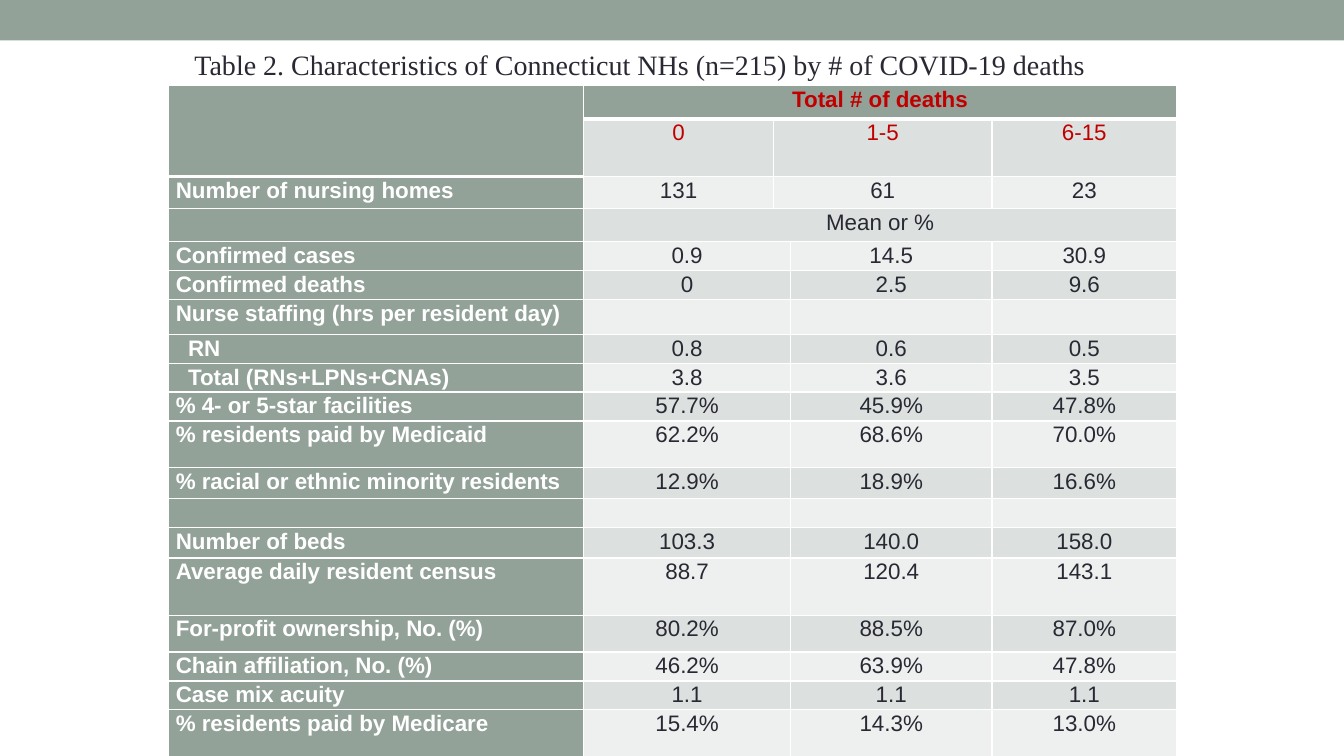
from dataclasses import dataclass

from lxml.etree import SubElement
from pptx import Presentation
from pptx.dml.color import RGBColor as RGB
from pptx.enum.shapes import MSO_SHAPE as Shape
from pptx.enum.text import PP_ALIGN as Align
from pptx.oxml import parse_xml
from pptx.oxml.ns import nsdecls, qn
from pptx.util import Cm, Pt


@dataclass(frozen=True)
class Theme:
    sage: str = "93A299"
    band_dark: str = "DCE0DE"
    band_light: str = "EEF0EF"
    ink: str = "292934"
    red: str = "C00000"
    white: str = "FFFFFF"
    title_font: str = "Times New Roman"
    body_font: str = "Arial"
    title_size: int = 20
    body_size: int = 16
    thin: float = 1
    thick: float = 3


THEME = Theme()

# Value cells of a row, as (first column, columns covered)
WIDE = ((1, 4),)
COUNTS = ((1, 1), (2, 2), (4, 1))
MEANS = ((1, 2), (3, 1), (4, 1))
BLANK = ("", "", "")


@dataclass(frozen=True)
class Row:
    height: float
    label: str
    values: tuple
    layout: tuple = MEANS
    indent: float = 0
    color: str = THEME.ink


COLUMN_WIDTHS = (10.46, 4.78, 0.43, 5.08, 4.65)
HEADER_ROWS = 2
SIDE_MARGIN = 0.18
ROWS = (
    Row(0.83, "", ("Total # of deaths",), WIDE, color=THEME.red),
    Row(1.46, "", ("0", "1-5", "6-15"), COUNTS, color=THEME.red),
    Row(0.81, "Number of nursing homes", ("131", "61", "23"), COUNTS),
    Row(0.83, "", ("Mean or %",), WIDE),
    Row(0.73, "Confirmed cases", ("0.9", "14.5", "30.9")),
    Row(0.73, "Confirmed deaths", ("0", "2.5", "9.6")),
    Row(0.88, "Nurse staffing (hrs per resident day)", BLANK),
    Row(0.72, "RN", ("0.8", "0.6", "0.5"), indent=0.31),
    Row(0.72, "Total (RNs+LPNs+CNAs)", ("3.8", "3.6", "3.5"), indent=0.31),
    Row(0.73, "% 4- or 5-star facilities", ("57.7%", "45.9%", "47.8%")),
    Row(1.18, "% residents paid by Medicaid", ("62.2%", "68.6%", "70.0%")),
    Row(0.78, "% racial or ethnic minority residents", ("12.9%", "18.9%", "16.6%")),
    Row(0.73, "", BLANK),
    Row(0.76, "Number of beds", ("103.3", "140.0", "158.0")),
    Row(1.44, "Average daily resident census", ("88.7", "120.4", "143.1")),
    Row(0.93, "For-profit ownership, No. (%)", ("80.2%", "88.5%", "87.0%")),
    Row(0.73, "Chain affiliation, No. (%)", ("46.2%", "63.9%", "47.8%")),
    Row(0.71, "Case mix acuity", ("1.1", "1.1", "1.1")),
    Row(1.18, "% residents paid by Medicare", ("15.4%", "14.3%", "13.0%")),
)


def add_run(p, text: str, font: str, size: int, color: str, bold: bool = False) -> None:
    r = p.add_run()
    r.text = text
    r.font.name = font
    r.font.size = Pt(size)
    r.font.bold = bold
    r.font.color.rgb = RGB.from_string(color)


def set_borders(cell, top: float, bottom: float) -> None:
    """White rules on all four sides, in the order the schema asks for."""
    widths = {"L": THEME.thin, "R": THEME.thin, "T": top, "B": bottom}
    tc_pr = cell._tc.get_or_add_tcPr()
    for i, (side, width) in enumerate(widths.items()):
        tc_pr.insert(i, parse_xml(
            f'<a:ln{side} {nsdecls("a")} w="{Pt(width)}"><a:solidFill>'
            f'<a:srgbClr val="{THEME.white}"/></a:solidFill></a:ln{side}>'))


def style_cell(cell, fill: str, top: float, bottom: float) -> None:
    cell.fill.solid()
    cell.fill.fore_color.rgb = RGB.from_string(fill)
    cell.margin_left = cell.margin_right = Cm(SIDE_MARGIN)
    cell.margin_top = cell.margin_bottom = 0
    set_borders(cell, top, bottom)
    # Keeps cells without text from stretching their row
    SubElement(cell.text_frame.paragraphs[0]._p, qn("a:endParaRPr"),
               sz=str(THEME.body_size * 100))


def write_cell(cell, text: str, align: Align, color: str, bold: bool) -> None:
    if not text:
        return
    p = cell.text_frame.paragraphs[0]
    p.alignment = align
    p.line_spacing = 1.07
    add_run(p, text, THEME.body_font, THEME.body_size, color, bold)


def rule_width(line: int, col: int) -> float:
    """Width of the horizontal rule above row number `line`."""
    heavy_line = HEADER_ROWS if col == 0 else 1
    return THEME.thick if line == heavy_line else THEME.thin


def add_deaths_table(s) -> None:
    frame = s.shapes.add_table(
        len(ROWS), len(COLUMN_WIDTHS), Cm(4.25), Cm(2.16),
        Cm(sum(COLUMN_WIDTHS)), Cm(sum(row.height for row in ROWS)))
    table = frame.table
    table.first_row = table.horz_banding = False
    for column, width in zip(table.columns, COLUMN_WIDTHS):
        column.width = Cm(width)

    for i, row in enumerate(ROWS):
        table.rows[i].height = Cm(row.height)
        band = THEME.band_dark if i % 2 else THEME.band_light
        for col in range(len(COLUMN_WIDTHS)):
            fill = THEME.sage if col == 0 or i == 0 else band
            style_cell(table.cell(i, col), fill,
                       rule_width(i, col), rule_width(i + 1, col))

        # Row label
        label = table.cell(i, 0)
        label.margin_left = Cm(SIDE_MARGIN + row.indent)
        write_cell(label, row.label, Align.LEFT, THEME.white, True)

        # Values
        for (first, span), value in zip(row.layout, row.values):
            cell = table.cell(i, first)
            if span > 1:
                cell.merge(table.cell(i, first + span - 1))
            write_cell(cell, value, Align.CENTER, row.color, i == 0)

    # Empty corner beside the header rows
    corner = table.cell(0, 0)
    corner.merge(table.cell(HEADER_ROWS - 1, 0))
    bottom = corner._tc.tcPr.find(qn("a:lnB"))
    bottom.set("w", str(Pt(THEME.thick)))


def add_top_band(s, width: int) -> None:
    sp = s.shapes.add_shape(Shape.RECTANGLE, 0, 0, width, Cm(1.02))
    sp.shadow.inherit = False
    sp.fill.solid()
    sp.fill.fore_color.rgb = RGB.from_string(THEME.sage)
    sp.line.fill.background()


def add_title(s) -> None:
    tf = s.shapes.add_textbox(Cm(4.65), Cm(1.07), Cm(23.7), Cm(1.12)).text_frame
    tf.word_wrap = True
    add_run(tf.paragraphs[0],
            "Table 2. Characteristics of Connecticut NHs (n=215) by # of COVID-19 deaths",
            THEME.title_font, THEME.title_size, THEME.ink)


def main() -> None:
    prs = Presentation()
    prs.slide_width, prs.slide_height = Cm(33.87), Cm(19.05)
    s = prs.slides.add_slide(prs.slide_layouts[6])
    add_top_band(s, prs.slide_width)
    add_title(s)
    add_deaths_table(s)
    prs.save("out.pptx")


if __name__ == "__main__":
    main()
